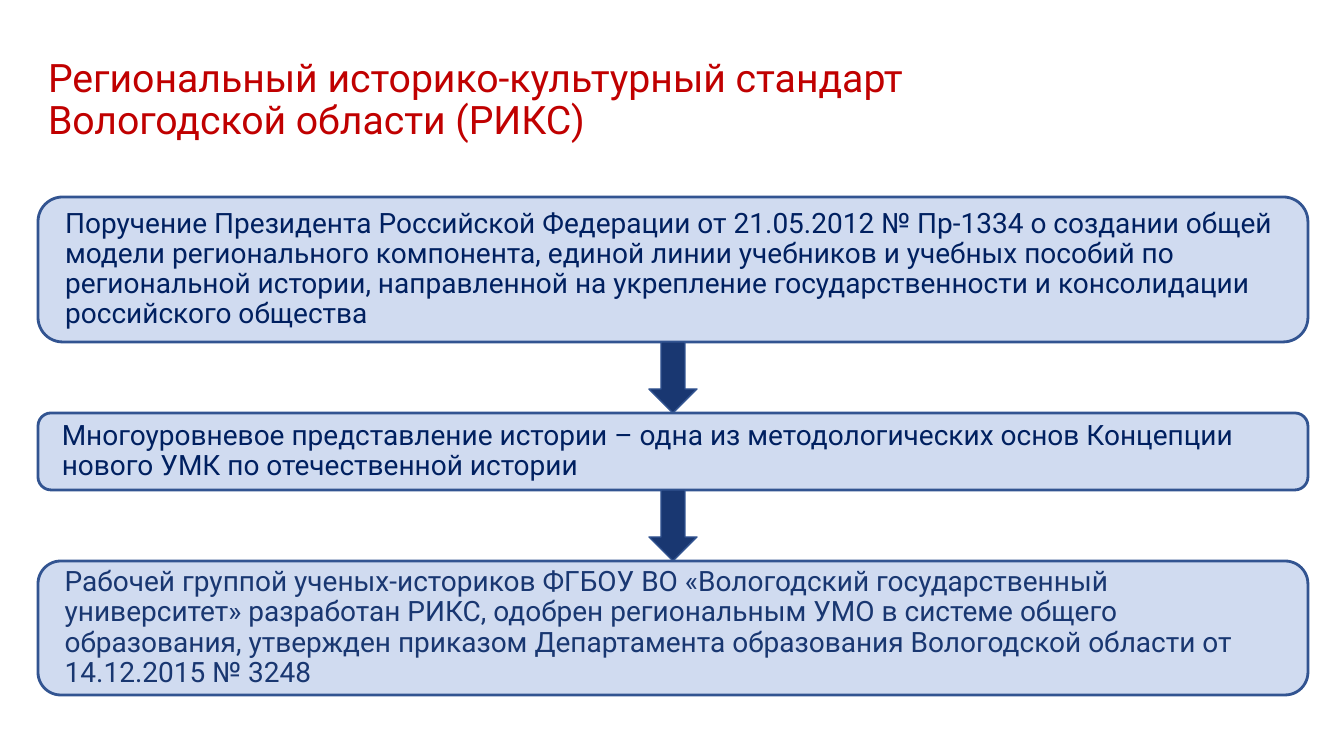
"""Builds the slide on the regional historical and cultural standard."""
from dataclasses import dataclass

from lxml import etree
from pptx import Presentation
from pptx.dml.color import RGBColor
from pptx.enum.shapes import MSO_SHAPE as SHAPE
from pptx.enum.text import MSO_ANCHOR as ANCHOR, MSO_AUTO_SIZE as AUTO_SIZE, PP_ALIGN as ALIGN
from pptx.oxml.ns import qn
from pptx.util import Pt


@dataclass(frozen=True)
class Theme:
    font: str = "Roboto"
    title: str = "C00000"
    text: str = "002060"
    accent: str = "193771"
    box: str = "4472C4"
    line: str = "325491"
    box_opacity: int = 25
    title_size: int = 28
    text_size: int = 20


THEME = Theme()
PX = 914400 / 100.8
TITLE = "Региональный историко-культурный стандарт Вологодской области (РИКС)"
STEPS = [
    dict(text="Поручение Президента Российской Федерации от 21.05.2012 № Пр-1334 о создании общей "
              "модели регионального компонента, единой линии учебников и учебных пособий "
              "по региональной истории, направленной на укрепление государственности "
              "и консолидации российского общества",
         height=145, corner=0.17, color=THEME.text),
    dict(text="Многоуровневое представление истории – одна из методологических основ Концепции "
              "нового УМК по отечественной истории",
         height=77, corner=0.17, color=THEME.text),
    dict(text="Рабочей группой ученых-историков ФГБОУ ВО «Вологодский государственный университет» "
              "разработан РИКС, одобрен региональным УМО в системе общего образования, "
              "утвержден приказом Департамента образования Вологодской области "
              "от 14.12.2015 № 3248",
         height=134, corner=0.17, color=THEME.accent),
]
LEFT, TOP, WIDTH, GAP = 38, 197, 1270, 71
ARROW_WIDTH = 48
TITLE_BOX = (38, 61, 1101, 80)


def px(n):
    return round(n * PX)


def write(sp, text, *, size, color, insets=(10, 5, 10, 5)):
    tf = sp.text_frame
    tf.word_wrap = True
    tf.auto_size = AUTO_SIZE.NONE
    tf.vertical_anchor = ANCHOR.MIDDLE
    tf.margin_left, tf.margin_top, tf.margin_right, tf.margin_bottom = map(px, insets)
    p = tf.paragraphs[0]
    p.alignment = ALIGN.LEFT
    p.line_spacing = 0.9
    r = p.add_run()
    r.text = text
    r.font.name = THEME.font
    r.font.size = Pt(size)
    r.font.color.rgb = RGBColor.from_string(color)


def add_shape(s, kind, box, *, fill, line_width, opacity=100):
    sp = s.shapes.add_shape(kind, *map(px, box))
    sp.shadow.inherit = False
    sp.fill.solid()
    sp.fill.fore_color.rgb = RGBColor.from_string(fill)
    sp.line.color.rgb = RGBColor.from_string(THEME.line)
    sp.line.width = Pt(line_width)
    if opacity < 100:
        color = sp.fill._xPr.find(qn("a:solidFill"))[0]
        etree.SubElement(color, qn("a:alpha"), val=str(opacity * 1000))
    return sp


def main():
    prs = Presentation()
    prs.slide_width, prs.slide_height = px(1344), px(756)
    s = prs.slides.add_slide(prs.slide_layouts[5])

    title = s.shapes.title
    title.left, title.top, title.width, title.height = map(px, TITLE_BOX)
    write(title, TITLE, size=THEME.title_size, color=THEME.title)

    top = TOP
    for i, step in enumerate(STEPS):
        if i:
            arrow_box = (LEFT + (WIDTH - ARROW_WIDTH) / 2, top - GAP, ARROW_WIDTH, GAP)
            add_shape(s, SHAPE.DOWN_ARROW, arrow_box, fill=THEME.accent, line_width=1)
        sp = add_shape(s, SHAPE.ROUNDED_RECTANGLE, (LEFT, top, WIDTH, step["height"]),
                       fill=THEME.box, line_width=2, opacity=THEME.box_opacity)
        sp.adjustments[0] = step["corner"]
        write(sp, step["text"], size=THEME.text_size, color=step["color"], insets=(20, 5, 10, 5))
        top += step["height"] + GAP

    prs.save("out.pptx")


if __name__ == "__main__":
    main()
